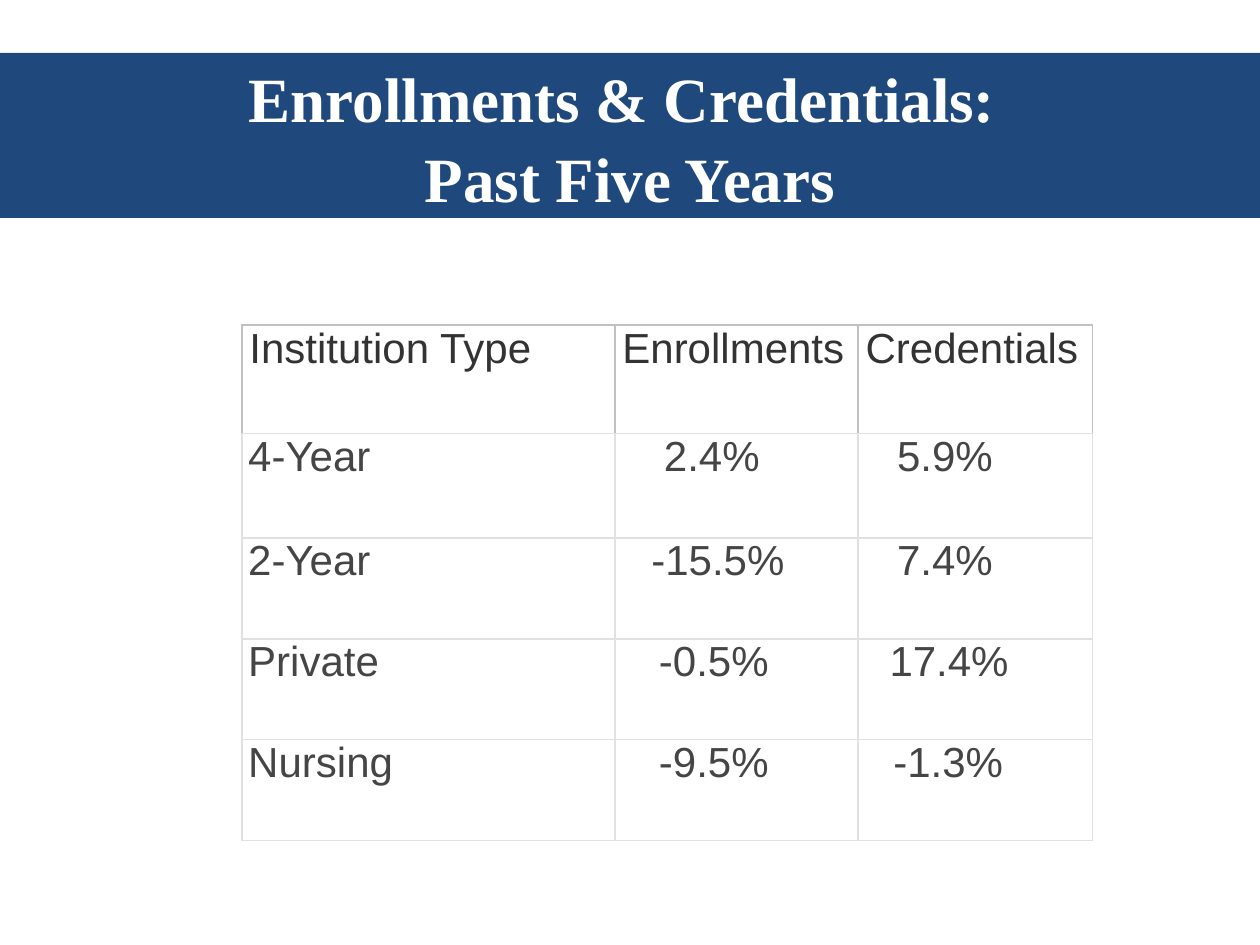
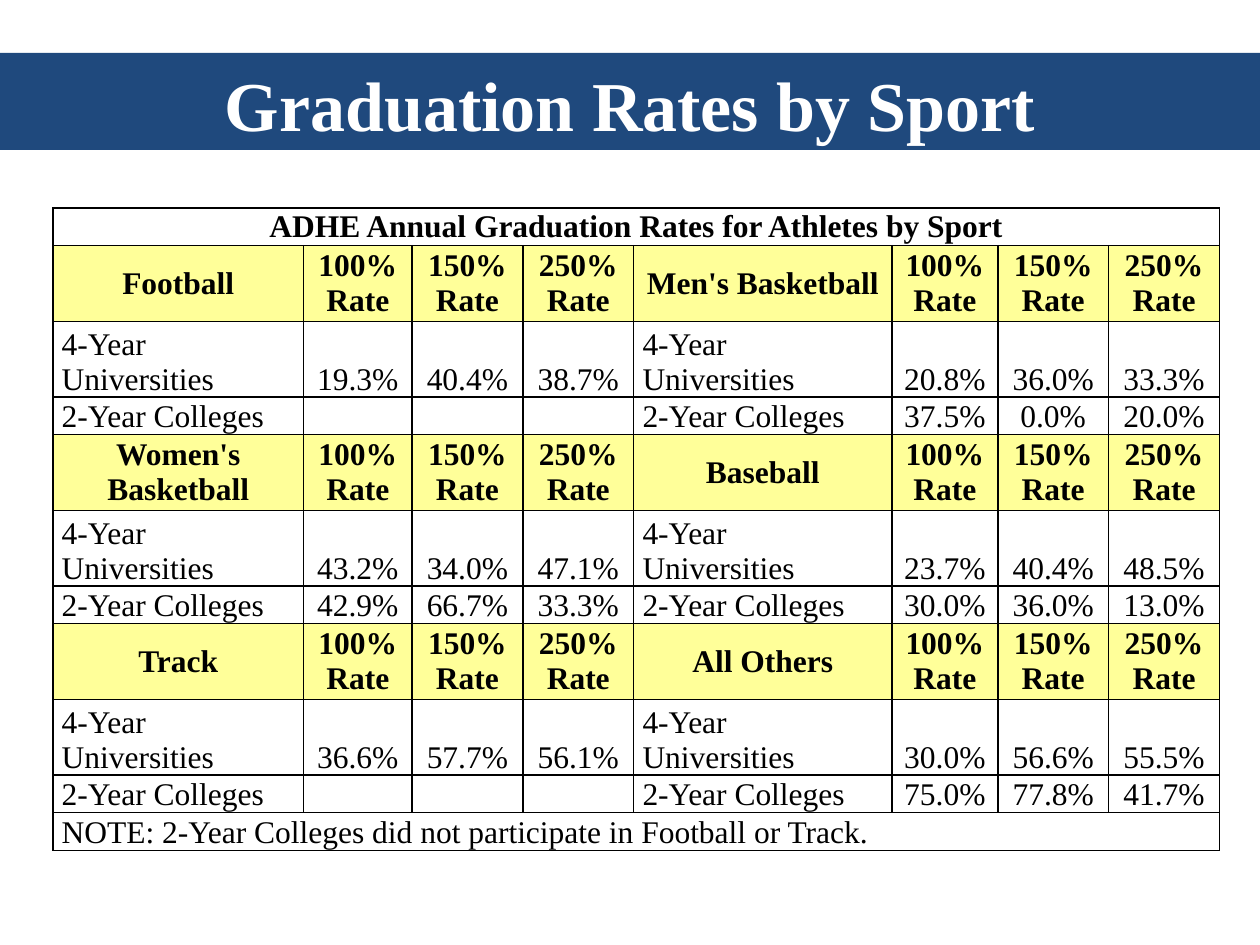
"""Build two slides on enrollments, credentials and graduation rates by sport."""
from lxml.etree import SubElement
from pptx import Presentation
from pptx.dml.color import RGBColor
from pptx.enum.text import MSO_ANCHOR, MSO_AUTO_SIZE, PP_ALIGN
from pptx.oxml.ns import qn
from pptx.util import Inches, Pt

SERIF, SANS = "Times New Roman", "Arial"
NAVY, WHITE, BLACK, YELLOW = "1F497D", "FFFFFF", "000000", "FFFF99"
HEAD_TEXT, BODY_TEXT = "333333", "454545"
HEAD_LINE, BODY_LINE = "C0C0C0", "E1E1E1"

TREND_COLS = [2.96, 1.93, 1.86]
TREND_HEIGHTS = [0.86, 0.83, 0.8, 0.8, 0.8]
TREND = [
    ["Institution Type", "Enrollments", "Credentials"],
    ["4-Year", "2.4%", "5.9%"],
    ["2-Year", "-15.5%", "7.4%"],
    ["Private", "-0.5%", "17.4%"],
    ["Nursing", "-9.5%", "-1.3%"],
]
TREND_INDENTS = [
    [0.06, 0.06, 0.06],
    [0.05, 0.39, 0.31],
    [0.05, 0.29, 0.31],
    [0.05, 0.35, 0.25],
    [0.05, 0.35, 0.28],
]

SPORT_COLS = [1.99, 0.86, 0.88, 0.88, 2.05, 0.84, 0.88, 0.88]
LINE_HEIGHT = 0.3
SPORT_TITLE = "ADHE Annual Graduation Rates for Athletes by Sport"
SPORT_NOTE = "NOTE: 2-Year Colleges did not participate in Football or Track."
RATES = ["100% Rate", "150% Rate", "250% Rate"]
NO_RATES = ["", "", ""]
SPORT_PAIRS = [
    (("Football", ["19.3%", "40.4%", "38.7%"], NO_RATES),
     ("Men's Basketball", ["20.8%", "36.0%", "33.3%"], ["37.5%", "0.0%", "20.0%"])),
    (("Women's Basketball", ["43.2%", "34.0%", "47.1%"], ["42.9%", "66.7%", "33.3%"]),
     ("Baseball", ["23.7%", "40.4%", "48.5%"], ["30.0%", "36.0%", "13.0%"])),
    (("Track", ["36.6%", "57.7%", "56.1%"], NO_RATES),
     ("All Others", ["30.0%", "56.6%", "55.5%"], ["75.0%", "77.8%", "41.7%"])),
]


def rgb(color):
    return RGBColor.from_string(color)


def style_font(font, name, size, color, bold):
    font.name, font.size, font.bold = name, Pt(size), bold
    font.color.rgb = rgb(color)


def add_title_slide(prs, lines, size, height):
    s = prs.slides.add_slide(prs.slide_layouts[5])
    band = s.shapes.title
    band.left, band.top = 0, Inches(0.42)
    band.width, band.height = prs.slide_width, Inches(height)
    band.fill.solid()
    band.fill.fore_color.rgb = rgb(NAVY)
    tf = band.text_frame
    tf.text = "\n".join(lines)
    tf.auto_size = MSO_AUTO_SIZE.NONE
    tf.vertical_anchor = MSO_ANCHOR.MIDDLE
    for p in tf.paragraphs:
        p.alignment = PP_ALIGN.CENTER
        p.line_spacing = 1.05
        style_font(p.runs[0].font, SERIF, size, WHITE, True)
    return s


def add_grid(s, left, top, cols, heights):
    frame = s.shapes.add_table(len(heights), len(cols), Inches(left), Inches(top),
                               Inches(sum(cols)), Inches(sum(heights)))
    table = frame.table
    table.first_row = table.horz_banding = False
    for col, width in zip(table.columns, cols):
        col.width = Inches(width)
    for row, height in zip(table.rows, heights):
        row.height = Inches(height)
    return table


def set_borders(cell, side_color, top_color, bottom_color):
    tcPr = cell._tc.get_or_add_tcPr()
    colors = {"L": side_color, "R": side_color, "T": top_color, "B": bottom_color}
    for side, color in colors.items():
        ln = SubElement(tcPr, qn(f"a:ln{side}"), w=str(Pt(1)))
        SubElement(SubElement(ln, qn("a:solidFill")), qn("a:srgbClr"), val=color)


def fill_cell(cell, text, font, margins, fill=None, align=PP_ALIGN.LEFT,
              anchor=MSO_ANCHOR.TOP):
    cell.margin_left, cell.margin_right = (Inches(m) for m in margins)
    cell.margin_top = cell.margin_bottom = 0
    cell.vertical_anchor = anchor
    if fill:
        cell.fill.solid()
        cell.fill.fore_color.rgb = rgb(fill)
    else:
        cell.fill.background()
    p = cell.text_frame.paragraphs[0]
    p.text = text
    p.alignment = align
    if text:
        style_font(p.runs[0].font, *font)
    else:
        end = SubElement(p._p, qn("a:endParaRPr"), sz=str(font[1] * 100))
        SubElement(end, qn("a:latin"), typeface=font[0])


def build_trend(prs):
    s = add_title_slide(prs, ["Enrollments & Credentials: ", "Past Five Years"], 36, 1.31)
    table = add_grid(s, 1.92, 2.58, TREND_COLS, TREND_HEIGHTS)
    for i, (texts, indents) in enumerate(zip(TREND, TREND_INDENTS)):
        line = BODY_LINE if i else HEAD_LINE
        font = (SANS, 24, BODY_TEXT if i else HEAD_TEXT, False)
        for j, (text, indent) in enumerate(zip(texts, indents)):
            cell = table.cell(i, j)
            set_borders(cell, line, line, BODY_LINE)
            fill_cell(cell, text, font, (indent, 0))


def sport_rows():
    rows = [("title", 1, [SPORT_TITLE] + [""] * 7)]
    for pair in SPORT_PAIRS:
        names, four_year, two_year = [], [], []
        for sport, four, two in pair:
            names += [sport, *RATES]
            four_year += ["4-Year Universities", *four]
            two_year += ["2-Year Colleges", *two]
        rows += [("head", 2, names), ("body", 2, four_year), ("body", 1, two_year)]
    return rows + [("note", 1, [SPORT_NOTE] + [""] * 7)]


def build_sports(prs):
    s = add_title_slide(prs, ["Graduation Rates by Sport"], 40, 0.77)
    rows = sport_rows()
    heights = [lines * LINE_HEIGHT for _, lines, _ in rows]
    table = add_grid(s, 0.42, 1.65, SPORT_COLS, heights)
    for i, (kind, _, texts) in enumerate(rows):
        bold = kind in ("title", "head")
        anchor = MSO_ANCHOR.MIDDLE if bold else MSO_ANCHOR.BOTTOM
        for j, text in enumerate(texts):
            cell = table.cell(i, j)
            centred = bold or j % 4
            set_borders(cell, BLACK, BLACK, BLACK)
            fill_cell(cell, text, (SERIF, 18, BLACK, bold), (0.07, 0.07),
                      YELLOW if kind == "head" else None,
                      PP_ALIGN.CENTER if centred else PP_ALIGN.LEFT, anchor)
        if kind in ("title", "note"):
            table.cell(i, 0).merge(table.cell(i, len(SPORT_COLS) - 1))


def main():
    prs = Presentation()
    prs.slide_width, prs.slide_height = Inches(10), Inches(7.5)
    build_trend(prs)
    build_sports(prs)
    prs.save("out.pptx")


if __name__ == "__main__":
    main()
